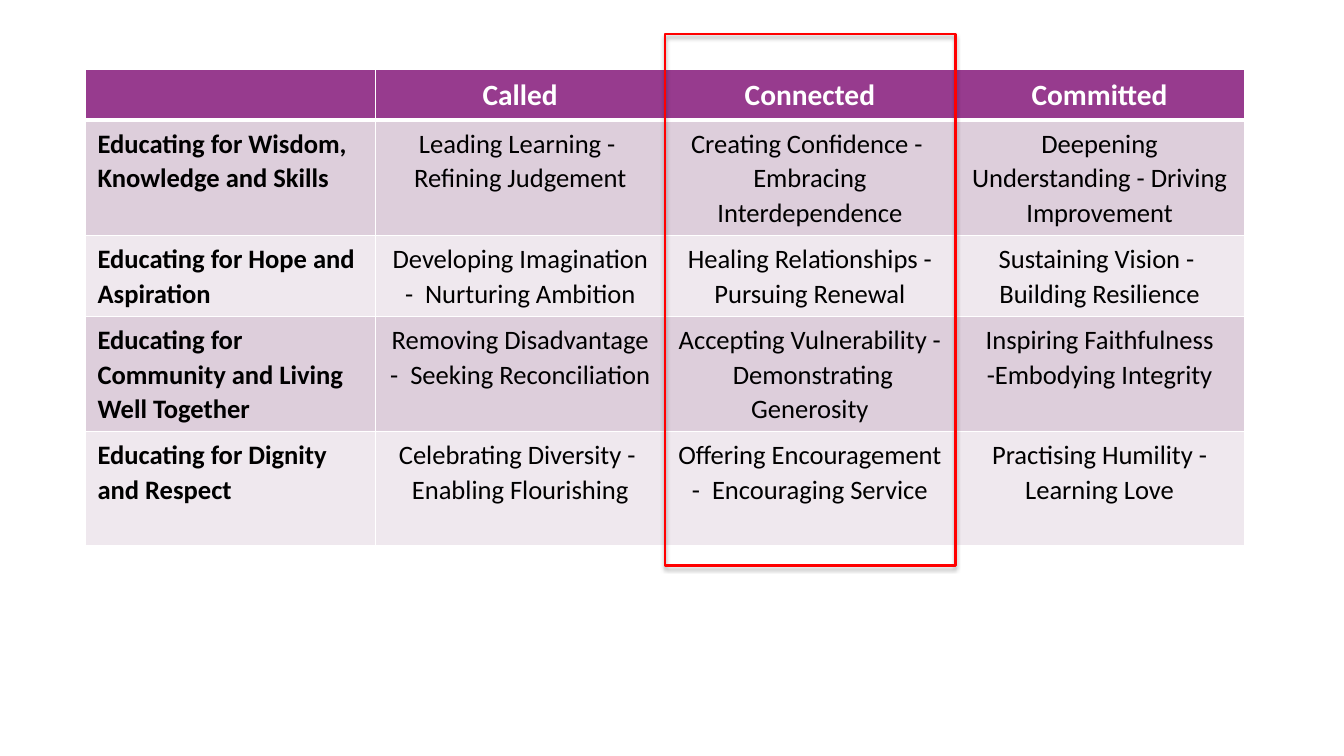
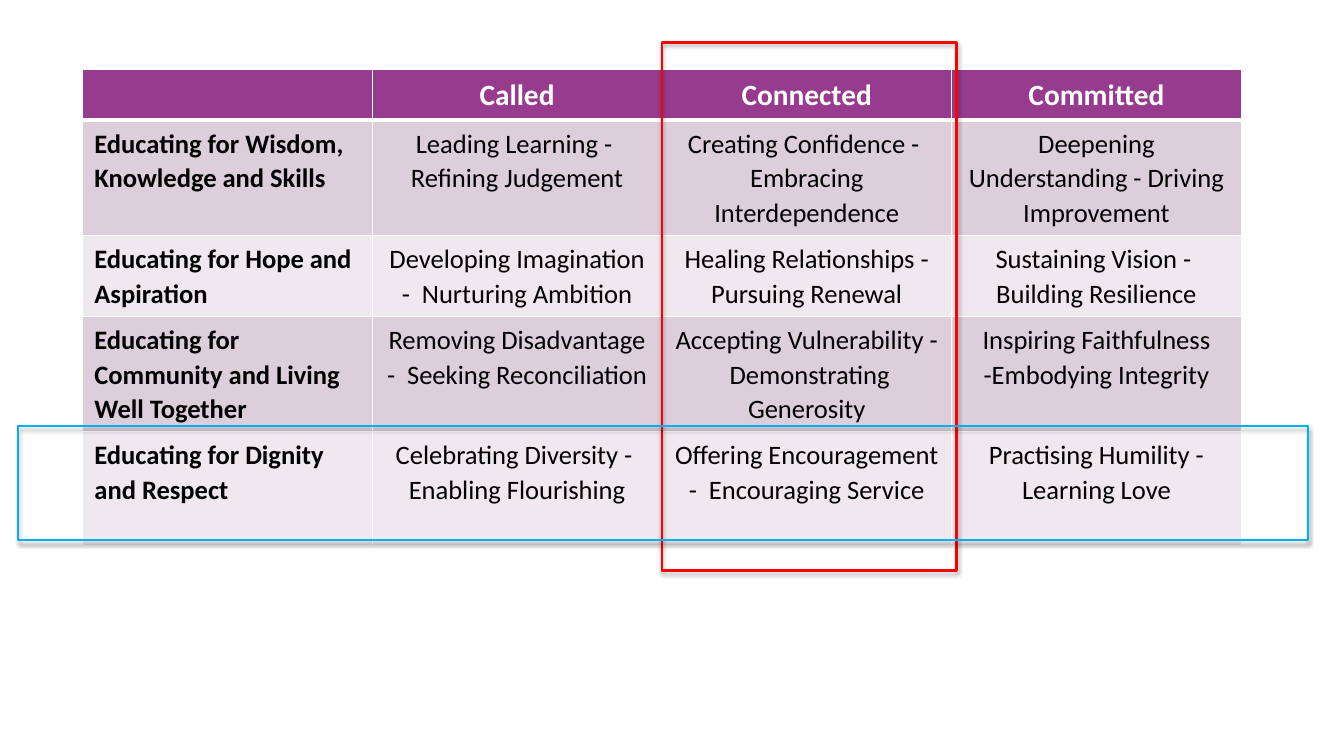
from dataclasses import dataclass

from lxml.etree import SubElement
from pptx import Presentation
from pptx.dml.color import RGBColor as RGB
from pptx.enum.shapes import MSO_SHAPE
from pptx.enum.text import PP_ALIGN
from pptx.oxml.ns import qn
from pptx.util import Cm, Pt


@dataclass(frozen=True)
class Theme:
    font: str = "Calibri"
    header_size: int = 21
    body_size: int = 19
    line_spacing: float = 1.07
    header_fill: str = "973B8E"
    bands: tuple = ("DDCEDB", "EFE8EE")
    header_text: str = "FFFFFF"
    body_text: str = "000000"
    border: str = "FFFFFF"
    column_mark: str = "FF0000"
    row_mark: str = "00B0F0"
    mark_width: float = 1.75


THEME = Theme()

ROWS = [
    ("", "Called", "Connected", "Committed"),
    ("Educating for Wisdom, Knowledge and Skills",
     "Leading Learning -  Refining Judgement",
     "Creating Confidence -  Embracing Interdependence",
     "Deepening Understanding - Driving Improvement"),
    ("Educating for Hope and Aspiration",
     "Developing Imagination -  Nurturing Ambition",
     "Healing Relationships - Pursuing Renewal",
     "Sustaining Vision -  Building Resilience"),
    ("Educating for Community and Living Well Together",
     "Removing Disadvantage -  Seeking Reconciliation",
     "Accepting Vulnerability -  Demonstrating Generosity",
     "Inspiring Faithfulness -Embodying Integrity"),
    ("Educating for Dignity and Respect",
     "Celebrating Diversity -  Enabling Flourishing",
     "Offering Encouragement -  Encouraging Service",
     "Practising Humility - Learning Love"),
]
ROW_HEIGHTS = (1.24, 2.88, 2.01, 2.88, 2.88)  # cm
COL_WIDTH = 7.3
TABLE_TOP = 1.75

# Each mark is (colour, left, top, width, height) in cm.
SLIDES = [
    {"table_left": 2.16,
     "marks": [(THEME.column_mark, 16.76, 0.86, 7.32, 13.39)]},
    {"table_left": 2.08,
     "marks": [(THEME.column_mark, 16.69, 1.07, 7.42, 13.31),
               (THEME.row_mark, 0.46, 10.74, 32.51, 2.87)]},
]


def set_borders(cell, row):
    """Draw thin borders, with a thick one between header and body."""
    tc_pr = cell._tc.get_or_add_tcPr()
    thick_side = {0: "B", 1: "T"}.get(row)
    for side in "LRTB":
        width = Pt(3 if side == thick_side else 1)
        ln = SubElement(tc_pr, qn(f"a:ln{side}"), w=str(width))
        fill = SubElement(ln, qn("a:solidFill"))
        SubElement(fill, qn("a:srgbClr"), val=THEME.border)


def format_cell(cell, text, row, col):
    is_header = row == 0
    set_borders(cell, row)
    cell.fill.solid()
    cell.fill.fore_color.rgb = RGB.from_string(
        THEME.header_fill if is_header else THEME.bands[(row - 1) % 2])
    cell.margin_left = cell.margin_right = Cm(0.3)
    cell.margin_top = cell.margin_bottom = Cm(0.15)
    p = cell.text_frame.paragraphs[0]
    p.text = text
    p.alignment = PP_ALIGN.CENTER if col else PP_ALIGN.LEFT
    p.line_spacing = THEME.line_spacing
    for r in p.runs:
        r.font.name = THEME.font
        r.font.size = Pt(THEME.header_size if is_header else THEME.body_size)
        r.font.bold = is_header or col == 0
        r.font.color.rgb = RGB.from_string(
            THEME.header_text if is_header else THEME.body_text)


def add_grid(slide, left):
    n_cols = len(ROWS[0])
    table = slide.shapes.add_table(
        len(ROWS), n_cols, Cm(left), Cm(TABLE_TOP),
        Cm(COL_WIDTH * n_cols), Cm(sum(ROW_HEIGHTS))).table
    for column in table.columns:
        column.width = Cm(COL_WIDTH)
    for i, (texts, height) in enumerate(zip(ROWS, ROW_HEIGHTS)):
        table.rows[i].height = Cm(height)
        for j, text in enumerate(texts):
            format_cell(table.cell(i, j), text, i, j)


def add_soft_shadow(sp):
    sp.shadow.inherit = False
    effects = sp._element.spPr.find(qn("a:effectLst"))
    shadow = SubElement(effects, qn("a:outerShdw"), blurRad=str(Pt(3.1)),
                        dist=str(Pt(1.8)), dir="5400000", rotWithShape="0")
    color = SubElement(shadow, qn("a:srgbClr"), val="000000")
    SubElement(color, qn("a:alpha"), val="35000")


def add_mark(slide, color, *box):
    sp = slide.shapes.add_shape(MSO_SHAPE.RECTANGLE, *map(Cm, box))
    sp.fill.background()
    sp.line.color.rgb = RGB.from_string(color)
    sp.line.width = Pt(THEME.mark_width)
    add_soft_shadow(sp)


def main():
    prs = Presentation()
    prs.slide_width, prs.slide_height = Cm(33.87), Cm(19.05)
    blank = prs.slide_layouts[6]
    for content in SLIDES:
        slide = prs.slides.add_slide(blank)
        add_grid(slide, content["table_left"])
        for mark in content["marks"]:
            add_mark(slide, *mark)
    prs.save("out.pptx")


if __name__ == "__main__":
    main()
